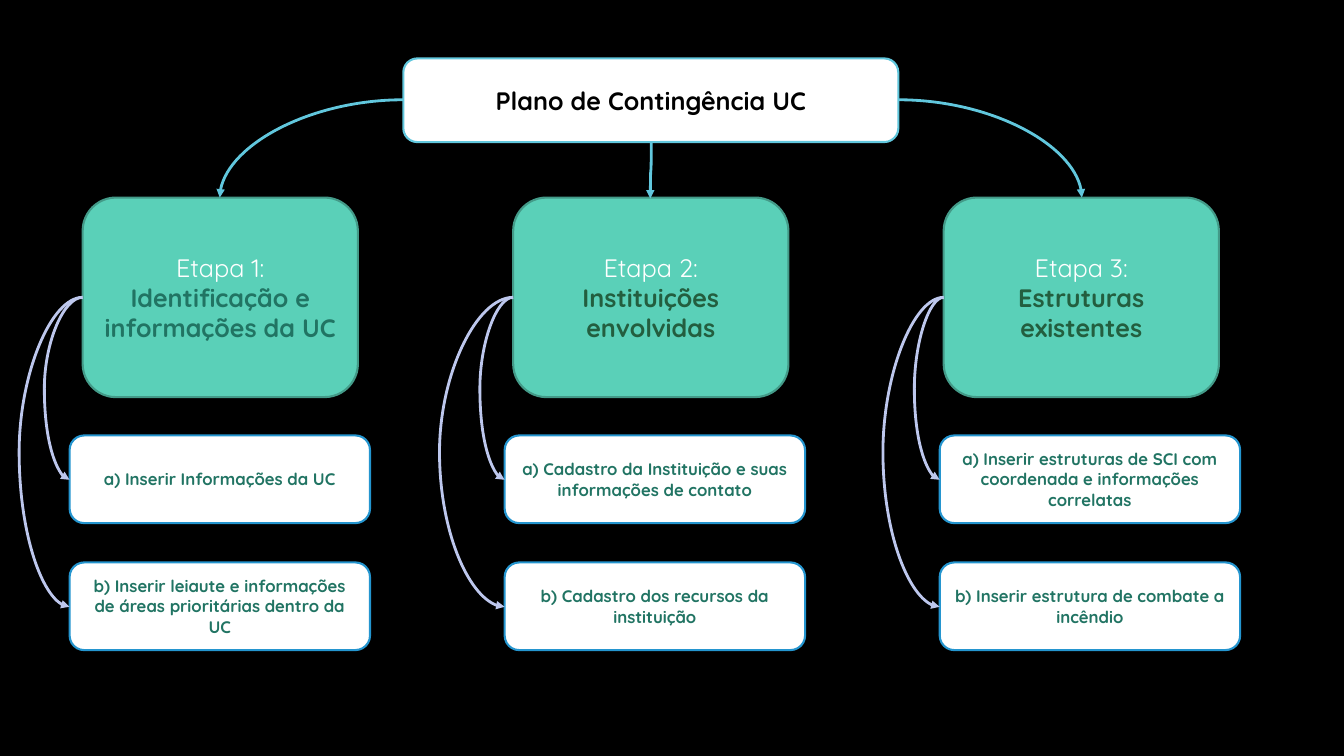
"""Builds the slide with the three stages of the contingency plan."""
from dataclasses import dataclass

from lxml.etree import SubElement
from pptx import Presentation
from pptx.dml.color import RGBColor
from pptx.enum.shapes import MSO_CONNECTOR, MSO_SHAPE
from pptx.enum.text import MSO_ANCHOR, MSO_AUTO_SIZE, PP_ALIGN
from pptx.oxml.ns import qn
from pptx.util import Inches, Pt


@dataclass(frozen=True)
class Theme:
    font: str = "Quicksand"
    back: str = "000000"
    white: str = "FFFFFF"
    black: str = "000000"
    mint: str = "5AD0B8"
    rim: str = "439A88"
    cyan: str = "61C7DD"
    blue: str = "2495CF"
    lilac: str = "BDC7ED"
    teal: str = "217463"
    green: str = "235E3F"
    large: int = 18
    small: int = 12
    edge: float = 1.5
    wire: float = 2


class Chart:
    def __init__(self, deck, theme):
        self.theme = theme
        self.slide = deck.slides.add_slide(deck.slide_layouts[5])
        fill = self.slide.background.fill
        fill.solid()
        fill.fore_color.rgb = RGBColor.from_string(theme.back)

    def label(self, shape, lines, size):
        frame = shape.text_frame
        frame.text = "\n".join(text for text, _, _ in lines)
        frame.word_wrap = True
        frame.auto_size = MSO_AUTO_SIZE.NONE
        frame.vertical_anchor = MSO_ANCHOR.MIDDLE
        for para, (_, color, bold) in zip(frame.paragraphs, lines):
            para.alignment = PP_ALIGN.CENTER
            para.line_spacing = 1.0
            para.space_before = Pt(0)
            for run in para.runs:
                run.font.name = self.theme.font
                run.font.size = Pt(size)
                run.font.bold = bold
                run.font.color.rgb = RGBColor.from_string(color)

    def box(self, place, fill, line):
        shape = self.slide.shapes.add_shape(
            MSO_SHAPE.ROUNDED_RECTANGLE, *map(Inches, place))
        shape.shadow.inherit = False
        shape.fill.solid()
        shape.fill.fore_color.rgb = RGBColor.from_string(fill)
        shape.line.color.rgb = RGBColor.from_string(line)
        shape.line.width = Pt(self.theme.edge)
        return shape

    def title(self, text, place):
        self.box(place, self.theme.white, self.theme.cyan)
        title = self.slide.shapes.title
        title.left, title.top, title.width, title.height = map(Inches, place)
        self.label(title, [(text, self.theme.black, True)], self.theme.large)
        self.slide.shapes._spTree.append(title._element)

    def stage(self, place, head, name, color):
        shape = self.box(place, self.theme.mint, self.theme.rim)
        lines = [(head, self.theme.white, False), (name, color, True)]
        self.label(shape, lines, self.theme.large)

    def item(self, place, text):
        shape = self.box(place, self.theme.white, self.theme.blue)
        self.label(shape, [(text, self.theme.teal, True)], self.theme.small)

    def arrow(self, start, end, color):
        wire = self.slide.shapes.add_connector(
            MSO_CONNECTOR.CURVE, *map(Inches, start + end))
        wire.line.color.rgb = RGBColor.from_string(color)
        wire.line.width = Pt(self.theme.wire)
        props = wire._element.spPr
        SubElement(props.find(qn("a:ln")), qn("a:tailEnd"), type="triangle")
        SubElement(props, qn("a:effectLst"))
        return props

    def arc(self, start, end):
        props = self.arrow(start, end, self.theme.cyan)
        props.find(qn("a:prstGeom")).set("prst", "curvedConnector2")

    def drop(self, start, end):
        (x1, y1), (x2, y2) = start, end
        mid_x, mid_y = (x1 + x2) / 2, (y1 + y2) / 2
        run, rise = (y2 - y1) / 2, (x1 - x2) / 2
        props = self.arrow((mid_x - run, mid_y - rise),
                           (mid_x + run, mid_y + rise), self.theme.cyan)
        props.find(qn("a:xfrm")).set("rot", "5400000")

    def hook(self, start, end, bend):
        props = self.arrow(start, end, self.theme.lilac)
        ratio = round(100000 * (start[0] - bend) / (start[0] - end[0]))
        guides = props.find(qn("a:prstGeom")).get_or_add_avLst()
        SubElement(guides, qn("a:gd"), name="adj1", fmla=f"val {ratio}")


def main():
    theme = Theme()
    deck = Presentation()
    deck.slide_width, deck.slide_height = Inches(13.33), Inches(7.5)
    chart = Chart(deck, theme)
    stages = [
        ("Etapa 1:", "Identificação e informações da UC", theme.teal,
         [("a) Inserir Informações da UC", 0.44),
          ("b) Inserir leiaute e informações de áreas prioritárias "
           "dentro da UC", 0.19)]),
        ("Etapa 2:", "Instituições envolvidas", theme.green,
         [("a) Cadastro da Instituição e suas informações de contato", 4.76),
          ("b) Cadastro dos recursos da instituição", 4.36)]),
        ("Etapa 3:", "Estruturas existentes", theme.green,
         [("a) Inserir estruturas de SCI com coordenada e informações "
           "correlatas", 9.07),
          ("b) Inserir estrutura de combate a incêndio", 8.76)]),
    ]
    chart.title("Plano de Contingência UC", (4, 0.58, 4.91, 0.83))
    for col, (head, name, color, items) in enumerate(stages):
        left = 0.82 + 4.27 * col
        edge = 0.69 + 8.63 * col / 2
        chart.stage((left, 1.96, 2.73, 1.98), head, name, color)
        for row, (text, bend) in enumerate(items):
            top = 4.32 + 1.26 * row
            chart.item((edge, top, 2.98, 0.87), text)
            chart.hook((left, 2.95), (edge, top + 0.44), bend)
    chart.arc((4, 0.99), (2.18, 1.96))
    chart.drop((6.46, 1.41), (6.45, 1.97))
    chart.arc((8.91, 0.99), (10.73, 1.96))
    deck.save("out.pptx")


if __name__ == "__main__":
    main()
